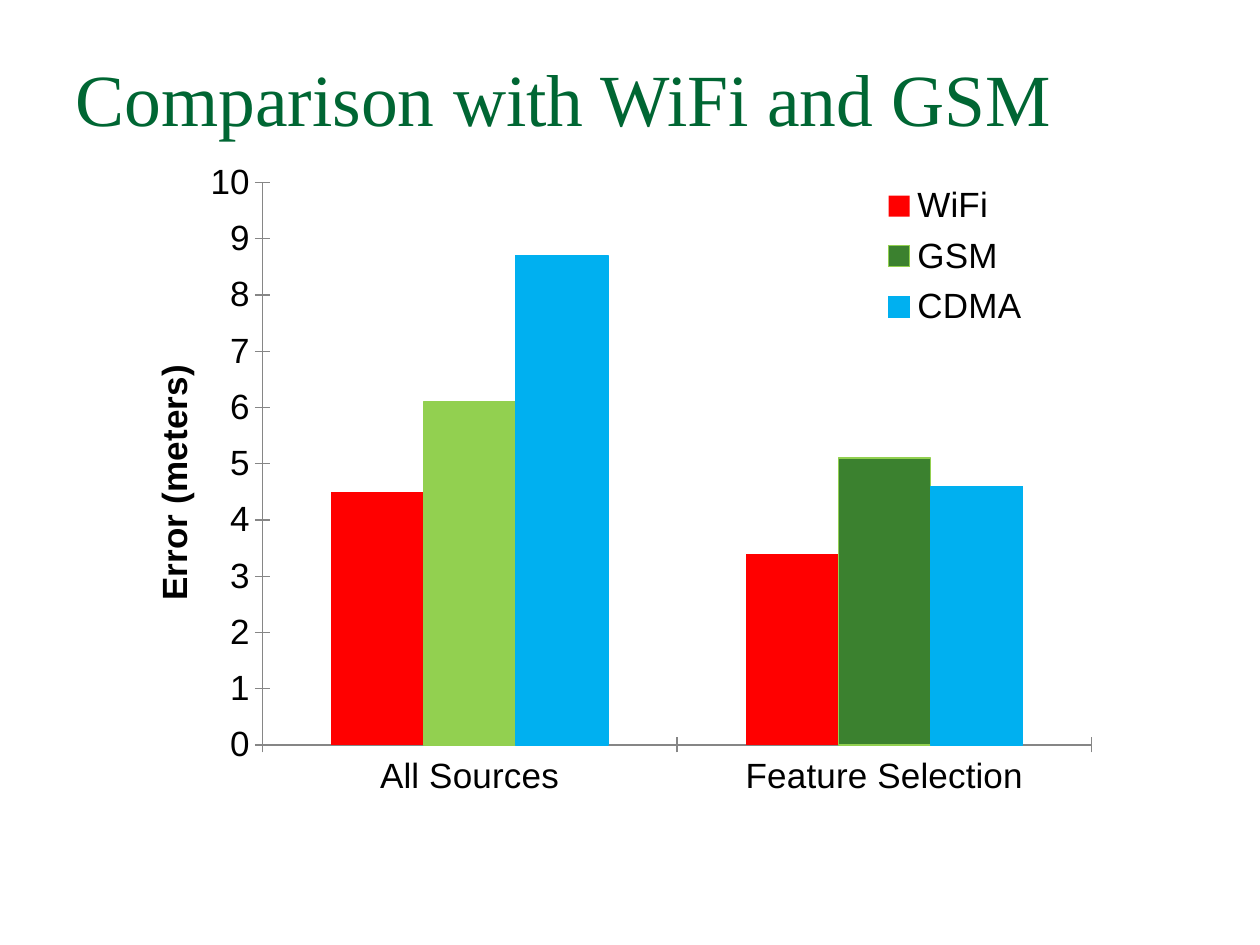
from lxml import etree
from pptx import Presentation
from pptx.chart.data import CategoryChartData
from pptx.dml.color import RGBColor
from pptx.enum.chart import XL_CHART_TYPE, XL_LEGEND_POSITION, XL_TICK_MARK
from pptx.enum.text import MSO_ANCHOR, PP_ALIGN
from pptx.oxml.ns import qn
from pptx.util import Pt

COLUMN = XL_CHART_TYPE.COLUMN_CLUSTERED
RIGHT = XL_LEGEND_POSITION.RIGHT
CROSS = XL_TICK_MARK.CROSS
NONE = XL_TICK_MARK.NONE
TOP = MSO_ANCHOR.TOP
LEFT = PP_ALIGN.LEFT

PINE = RGBColor(0x00, 0x66, 0x33)
BLACK = RGBColor(0x00, 0x00, 0x00)
GRAY = RGBColor(0x86, 0x86, 0x86)
RED = RGBColor(0xFF, 0x00, 0x00)
GREEN = RGBColor(0x3B, 0x81, 0x2F)
LIME = RGBColor(0x92, 0xD0, 0x50)
BLUE = RGBColor(0x00, 0xB0, 0xF0)

GROUPS = ["All Sources", "Feature Selection"]
SERIES = [
    ("WiFi", (4.5, 3.4), RED, None),
    ("GSM", (6.1, 5.1), GREEN, LIME),
    ("CDMA", (8.7, 4.6), BLUE, BLUE),
]


def set_font(font, size, name, color, bold=False):
    font.size = Pt(size)
    font.name = name
    font.color.rgb = color
    font.bold = bold


def add_title(slide, text):
    title = slide.shapes.title
    title.left, title.top = Pt(36), Pt(21.6)
    title.width, title.height = Pt(648), Pt(90)
    frame = title.text_frame
    frame.text = text
    frame.vertical_anchor = TOP
    frame.margin_top = Pt(8.4)
    para = frame.paragraphs[0]
    para.alignment = LEFT
    set_font(para.font, 42, "Times New Roman", PINE)


def paint(part, fill, line):
    part.format.fill.solid()
    part.format.fill.fore_color.rgb = fill
    if line is None:
        part.format.line.fill.background()
    else:
        part.format.line.color.rgb = line
        part.format.line.width = Pt(0.75)


def place(node, after, **values):
    for old in node.findall(qn("c:layout")):
        node.remove(old)
    layout = etree.Element(qn("c:layout"))
    manual = etree.SubElement(layout, qn("c:manualLayout"))
    for key, value in values.items():
        etree.SubElement(manual, qn("c:" + key)).set("val", str(value))
    if after is None:
        node.insert(0, layout)
    else:
        node.find(qn(after)).addnext(layout)


def style_axis(axis):
    axis.has_major_gridlines = False
    axis.major_tick_mark = CROSS
    axis.minor_tick_mark = NONE
    axis.format.line.color.rgb = GRAY
    axis.format.line.width = Pt(0.75)


def style_value(axis):
    style_axis(axis)
    axis.minimum_scale, axis.maximum_scale = 0, 10
    axis.major_unit = 1
    axis.tick_labels.number_format = "General"
    axis.tick_labels.number_format_is_linked = False
    title = axis.axis_title
    title.text_frame.text = "Error (meters)"
    set_font(title.text_frame.paragraphs[0].font, 20, "Arial", BLACK, True)
    place(title._element, "c:tx", xMode="edge", yMode="edge", x=0.03, y=0.3)


def style_legend(chart):
    chart.has_legend = True
    legend = chart.legend
    legend.position = RIGHT
    legend.include_in_layout = False
    place(legend._element, "c:legendPos", xMode="edge", yMode="edge",
          x=0.78, y=0.04, w=0.16, h=0.23)


def add_bars(slide):
    data = CategoryChartData()
    data.categories = GROUPS
    for name, values, _, _ in SERIES:
        data.add_series(name, values)
    frame = slide.shapes.add_chart(
        COLUMN, Pt(66.24), Pt(84.24), Pt(558), Pt(401.76), data)
    chart = frame.chart
    chart.has_title = False
    set_font(chart.font, 20, "Arial", BLACK)
    plot = chart.plots[0]
    plot.vary_by_categories = False
    plot.gap_width = 150
    plot.overlap = 0
    for series, (_, _, fill, line) in zip(plot.series, SERIES):
        paint(series, fill, line)
    paint(plot.series[1].points[0], LIME, LIME)
    style_axis(chart.category_axis)
    style_value(chart.value_axis)
    style_legend(chart)
    area = chart._chartSpace.find(".//" + qn("c:plotArea"))
    place(area, None, layoutTarget="inner", xMode="edge", yMode="edge",
          x=0.15, y=0.05, w=0.85, h=0.8)


def main():
    deck = Presentation()
    deck.slide_width, deck.slide_height = Pt(720), Pt(540)
    slide = deck.slides.add_slide(deck.slide_layouts[5])
    add_title(slide, "Comparison with WiFi and GSM")
    add_bars(slide)
    deck.save("out.pptx")


if __name__ == "__main__":
    main()
